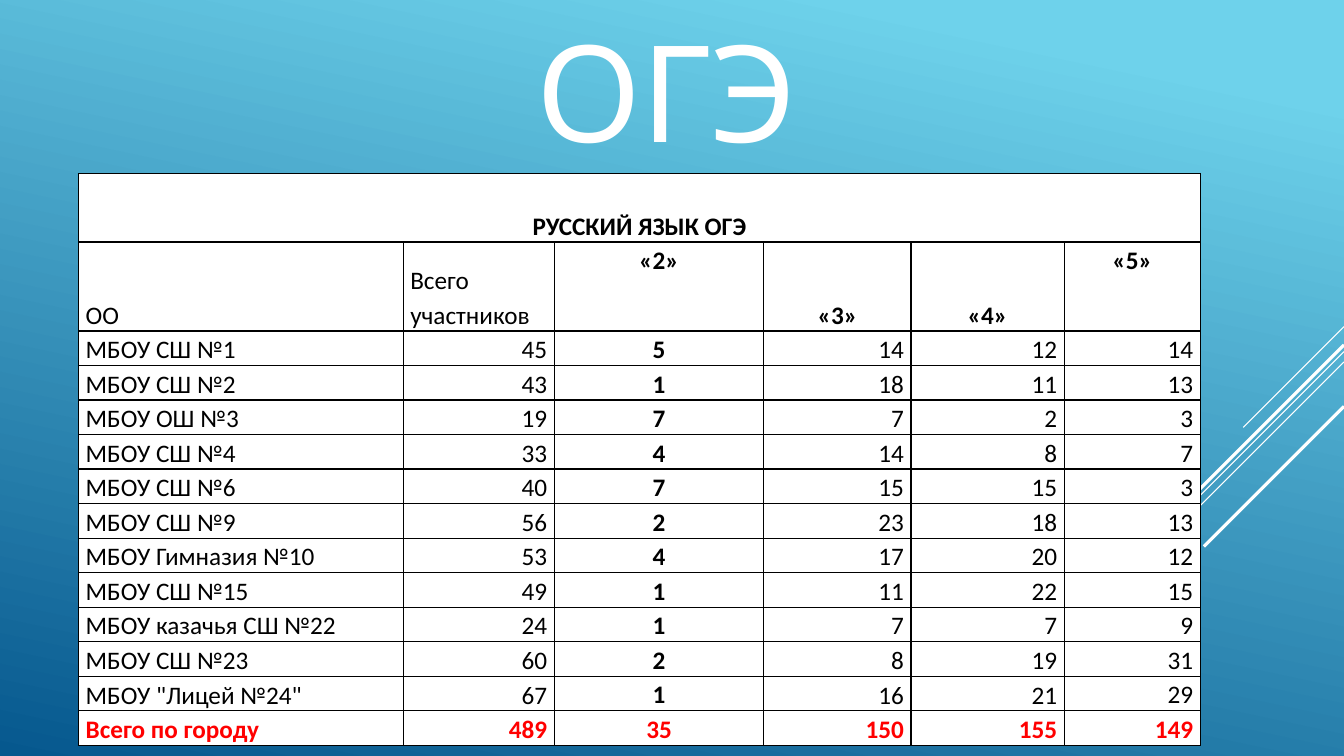
from dataclasses import dataclass

from lxml.etree import SubElement
from pptx import Presentation
from pptx.dml.color import RGBColor as Color
from pptx.enum.shapes import MSO_CONNECTOR as Connector
from pptx.enum.text import MSO_ANCHOR as Anchor, MSO_AUTO_SIZE as AutoSize, PP_ALIGN as Align
from pptx.oxml.ns import qn
from pptx.slide import Slide
from pptx.table import _Cell as Cell
from pptx.text.text import TextFrame
from pptx.util import Cm, Pt

COLORS = {
    "sky": "6ED2EB",
    "deep": "06588E",
    "white": "FFFFFF",
    "black": "000000",
    "total": "FF0000",
}
SLIDE_WIDTH, SLIDE_HEIGHT = 33.87, 19.05
TABLE_LEFT, TABLE_TOP = 1.98, 4.37
TITLE_ROW, HEADER_ROW, SCHOOL_ROW = 1.73, 2.24, 0.87


@dataclass
class Ray:
    top: float
    reach: float
    weight: float


@dataclass
class Column:
    heading: str
    width: float
    align: Align = Align.RIGHT
    anchor: Anchor = Anchor.BOTTOM
    bold: bool = False
    heading_align: Align = Align.CENTER
    heading_bold: bool = True


@dataclass
class School:
    name: str
    counts: tuple[int, ...]


RAYS = [
    Ray(8.23, 2.54, 0.75),
    Ray(8.86, 8.28, 0.75),
    Ray(9.12, 5.26, 0.75),
    Ray(8.69, 4.85, 2.25),
    Ray(10.24, 3.53, 2.25),
]
COLUMNS = [
    Column("ОО", 8.18, align=Align.LEFT, heading_align=Align.LEFT, heading_bold=False),
    Column("Всего участников", 3.81, heading_align=Align.LEFT, heading_bold=False),
    Column("«2»", 5.28, align=Align.CENTER, anchor=Anchor.TOP, bold=True),
    Column("«3»", 3.71),
    Column("«4»", 3.86),
    Column("«5»", 3.43, anchor=Anchor.TOP),
]
SCHOOLS = [
    School("МБОУ СШ №1", (45, 5, 14, 12, 14)),
    School("МБОУ СШ №2", (43, 1, 18, 11, 13)),
    School("МБОУ ОШ №3", (19, 7, 7, 2, 3)),
    School("МБОУ СШ №4", (33, 4, 14, 8, 7)),
    School("МБОУ СШ №6", (40, 7, 15, 15, 3)),
    School("МБОУ СШ №9", (56, 2, 23, 18, 13)),
    School("МБОУ Гимназия №10", (53, 4, 17, 20, 12)),
    School("МБОУ СШ №15", (49, 1, 11, 22, 15)),
    School("МБОУ казачья СШ №22", (24, 1, 7, 7, 9)),
    School("МБОУ СШ №23", (60, 2, 8, 19, 31)),
    School('МБОУ "Лицей №24"', (67, 1, 16, 21, 29)),
]
TOTAL = School("Всего по городу", (489, 35, 150, 155, 149))


def write(frame: TextFrame, text: str, *, font: str = "Calibri", size: float = 18,
          color: str = "black", bold: bool = False, align: Align = Align.LEFT,
          anchor: Anchor = Anchor.BOTTOM, spacing: float = 1.12) -> None:
    frame.word_wrap = True
    frame.vertical_anchor = anchor
    paragraph = frame.paragraphs[0]
    paragraph.alignment = align
    paragraph.line_spacing = spacing
    run = paragraph.add_run()
    run.text = text
    run.font.name = font
    run.font.size = Pt(size)
    run.font.bold = bold
    run.font.color.rgb = Color.from_string(COLORS[color])


def paint_background(slide: Slide) -> None:
    fill = slide.background.fill
    fill.gradient()
    fill.gradient_angle = 258
    for stop, position, name in zip(fill.gradient_stops, (0.1, 1), ("sky", "deep")):
        stop.position = position
        stop.color.rgb = Color.from_string(COLORS[name])


def draw_ray(slide: Slide, ray: Ray) -> None:
    connector = slide.shapes.add_connector(
        Connector.STRAIGHT, Cm(SLIDE_WIDTH), Cm(ray.top),
        Cm(SLIDE_WIDTH - ray.reach), Cm(ray.top + ray.reach))
    connector.line.color.rgb = Color.from_string(COLORS["white"])
    connector.line.width = Pt(ray.weight)
    SubElement(connector._element.spPr, qn("a:effectLst"))


def format_cell(cell: Cell) -> None:
    cell.margin_left = cell.margin_right = Cm(0.18)
    cell.margin_top = cell.margin_bottom = 0
    properties = cell._tc.get_or_add_tcPr()
    for side in ("lnL", "lnR", "lnT", "lnB"):
        border = SubElement(properties, qn(f"a:{side}"), w=str(Pt(1)))
        solid = SubElement(border, qn("a:solidFill"))
        SubElement(solid, qn("a:srgbClr"), val=COLORS["black"])
    cell.fill.solid()
    cell.fill.fore_color.rgb = Color.from_string(COLORS["white"])


def write_cell(cell: Cell, text: str, **text_format) -> None:
    anchor = text_format.pop("anchor", Anchor.BOTTOM)
    write(cell.text_frame, text, **text_format)
    cell.vertical_anchor = anchor


def draw_results(slide: Slide) -> None:
    records = [*SCHOOLS, TOTAL]
    heights = [TITLE_ROW, HEADER_ROW] + [SCHOOL_ROW] * len(records)
    table = slide.shapes.add_table(
        len(heights), len(COLUMNS), Cm(TABLE_LEFT), Cm(TABLE_TOP),
        Cm(sum(column.width for column in COLUMNS)), Cm(sum(heights))).table
    table.first_row = table.horz_banding = False
    for row, height in zip(table.rows, heights):
        row.height = Cm(height)
    for cell in table.iter_cells():
        format_cell(cell)

    table.cell(0, 0).merge(table.cell(0, len(COLUMNS) - 1))
    write_cell(table.cell(0, 0), "РУССКИЙ ЯЗЫК ОГЭ", bold=True, align=Align.CENTER)

    for index, column in enumerate(COLUMNS):
        table.columns[index].width = Cm(column.width)
        write_cell(table.cell(1, index), column.heading, bold=column.heading_bold,
                   align=column.heading_align, anchor=column.anchor)
        for row_index, record in enumerate(records, start=2):
            is_total = record is TOTAL
            value = (record.name, *record.counts)[index]
            write_cell(table.cell(row_index, index), str(value),
                       color="total" if is_total else "black",
                       bold=column.bold or is_total,
                       align=column.align, anchor=column.anchor)


def main() -> None:
    presentation = Presentation()
    presentation.slide_width = Cm(SLIDE_WIDTH)
    presentation.slide_height = Cm(SLIDE_HEIGHT)
    slide = presentation.slides.add_slide(presentation.slide_layouts[5])
    paint_background(slide)
    for ray in RAYS:
        draw_ray(slide, ray)

    title = slide.shapes.title
    title.left, title.top, title.width, title.height = Cm(3.78), Cm(1.14), Cm(26.04), Cm(2.21)
    title.text_frame.auto_size = AutoSize.NONE
    write(title.text_frame, "ОГЭ", font="Quicksand", size=96, color="white",
          align=Align.CENTER, anchor=Anchor.MIDDLE, spacing=1.0)

    draw_results(slide)
    presentation.save("out.pptx")


if __name__ == "__main__":
    main()
